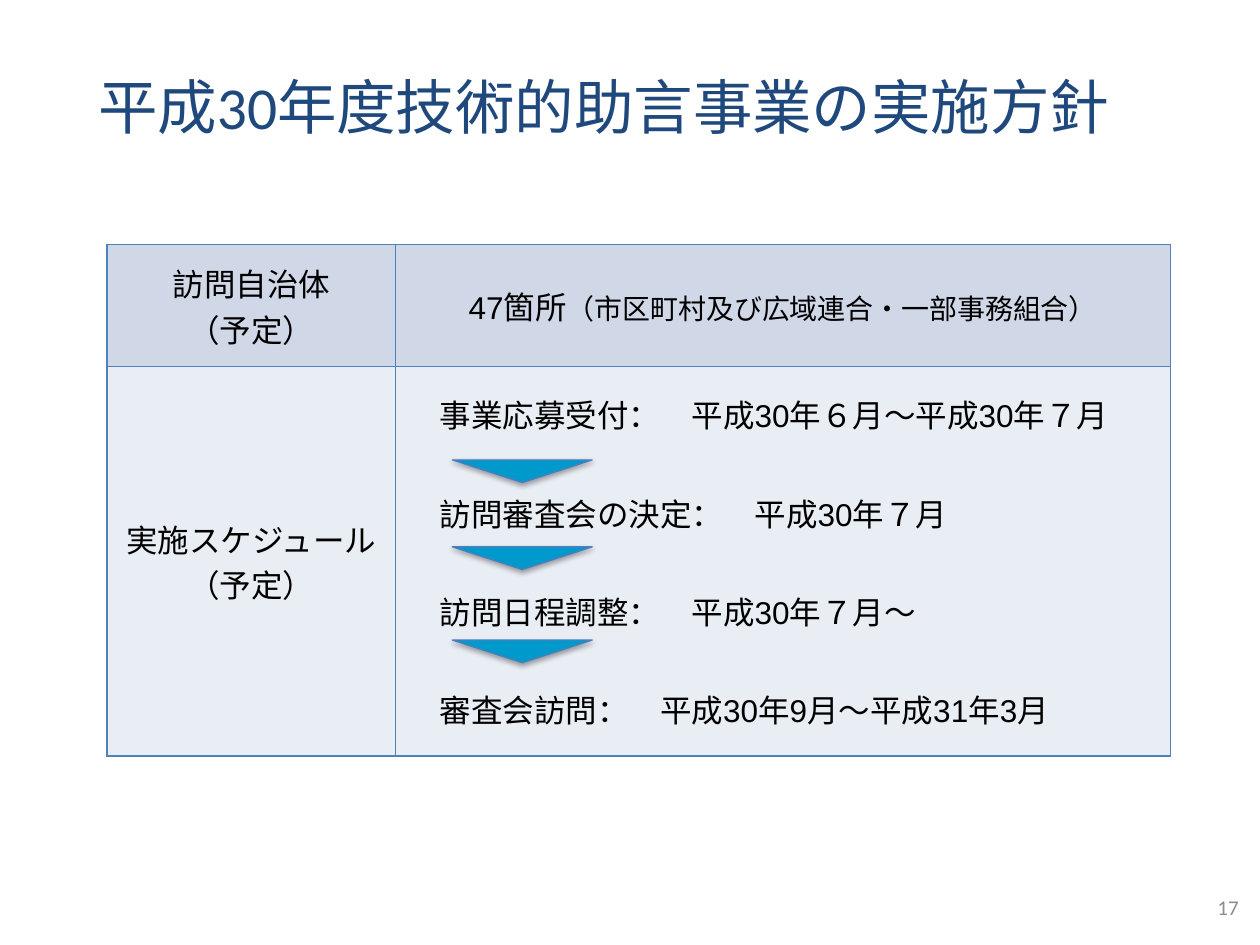
from dataclasses import dataclass

from lxml import etree
from pptx import Presentation
from pptx.dml.color import RGBColor
from pptx.enum.shapes import MSO_SHAPE as Shape
from pptx.enum.text import MSO_ANCHOR as Anchor, PP_ALIGN as Align
from pptx.oxml.ns import qn
from pptx.util import Inches, Pt


@dataclass(frozen=True)
class Theme:
    title_color: str = "1F497D"
    text_color: str = "000000"
    number_color: str = "8C8C8C"
    border_color: str = "4F81BD"
    arrow_fill: str = "0099CC"
    arrow_line: str = "4B7EBC"
    row_fills: tuple = ("D0D8E8", "E9EDF4")
    heading_font: str = "Calibri"
    body_font: str = "Arial"
    title_size: int = 34
    body_size: int = 18
    note_size: int = 16
    number_size: int = 12


def rgb(color):
    return RGBColor.from_string(color)


def write(frame, paragraphs, *, font, size, color, align=Align.LEFT, before=0, after=0):
    """Each paragraph is a string or a list of (text, size) runs."""
    frame.word_wrap = True
    for index, content in enumerate(paragraphs):
        paragraph = frame.paragraphs[0] if index == 0 else frame.add_paragraph()
        paragraph.alignment = align
        paragraph.space_before = Pt(before if index == 0 else 0)
        paragraph.space_after = Pt(after)
        runs = [(content, size)] if isinstance(content, str) else content
        for text, run_size in runs:
            run = paragraph.add_run()
            run.text = text
            run.font.name = font
            run.font.size = Pt(run_size)
            run.font.color.rgb = rgb(color)


class SlideBuilder:
    def __init__(self, slide, theme):
        self.slide = slide
        self.theme = theme

    def text(self, box, content, anchor, **style):
        shape = self.slide.shapes.add_textbox(*map(Inches, box))
        shape.text_frame.vertical_anchor = anchor
        write(shape.text_frame, [content], font=self.theme.heading_font, **style)

    def table(self, box, widths, heights, rows):
        table = self.slide.shapes.add_table(
            len(rows), len(widths), *map(Inches, box)).table
        for column, width in zip(table.columns, widths):
            column.width = Inches(width)
        for row, height in zip(table.rows, heights):
            row.height = Inches(height)
        for row, contents, fill in zip(table.rows, rows, self.theme.row_fills):
            for cell, (paragraphs, style) in zip(row.cells, contents):
                self.cell(cell, fill, paragraphs, style)

    def cell(self, cell, fill, paragraphs, style):
        cell.vertical_anchor = Anchor.MIDDLE
        cell.fill.solid()
        cell.fill.fore_color.rgb = rgb(fill)
        write(cell.text_frame, paragraphs, font=self.theme.body_font,
              size=self.theme.body_size, color=self.theme.text_color, **style)
        # Borders come before the fill in the cell properties
        properties = cell._tc.get_or_add_tcPr()
        for index, side in enumerate(("lnL", "lnR", "lnT", "lnB")):
            line = etree.Element(qn(f"a:{side}"), w=str(Pt(1)))
            solid = etree.SubElement(line, qn("a:solidFill"))
            etree.SubElement(solid, qn("a:srgbClr"), val=self.theme.border_color)
            properties.insert(index, line)

    def down_arrow(self, box):
        shape = self.slide.shapes.add_shape(
            Shape.ISOSCELES_TRIANGLE, *map(Inches, box))
        shape.rotation = 180
        shape.fill.solid()
        shape.fill.fore_color.rgb = rgb(self.theme.arrow_fill)
        shape.line.color.rgb = rgb(self.theme.arrow_line)
        shape.line.width = Pt(0.75)
        # Soft shadow straight below
        shape.shadow.inherit = False
        effects = shape._element.spPr.find(qn("a:effectLst"))
        shadow = etree.SubElement(
            effects, qn("a:outerShdw"), blurRad=str(Pt(3.1)), dist=str(Pt(1.8)),
            dir="5400000", rotWithShape="0")
        color = etree.SubElement(shadow, qn("a:srgbClr"), val="000000")
        etree.SubElement(color, qn("a:alpha"), val="35000")


def main():
    theme = Theme()
    presentation = Presentation()
    presentation.slide_width = Inches(10)
    presentation.slide_height = Inches(7.5)
    slide = presentation.slides.add_slide(presentation.slide_layouts[6])
    builder = SlideBuilder(slide, theme)

    # Title
    builder.text((0.68, 0.35, 8.75, 0.82), "平成30年度技術的助言事業の実施方針",
                 Anchor.BOTTOM, size=theme.title_size, color=theme.title_color)

    # Plan table
    centered = {"align": Align.CENTER}
    steps = {"before": 12, "after": 30}
    places = [("47箇所", theme.body_size),
              ("（市区町村及び広域連合・一部事務組合）", theme.note_size)]
    schedule = [
        "　事業応募受付：　平成30年６月～平成30年７月",
        "　訪問審査会の決定：　平成30年７月",
        "　訪問日程調整：　平成30年７月～",
        "　審査会訪問：　平成30年9月～平成31年3月",
    ]
    builder.table((0.85, 1.94, 8.44, 4.06), (2.29, 6.15), (0.97, 3.09), [
        [(["訪問自治体", "（予定）"], centered), ([places], centered)],
        [(["実施スケジュール", "（予定）"], centered), (schedule, steps)],
    ])

    # Arrows between the schedule steps
    for top in (3.65, 4.34, 5.08):
        builder.down_arrow((3.59, top, 1.11, 0.18))

    # Page number
    builder.text((7.6, 7, 2.33, 0.4), "17", Anchor.MIDDLE, align=Align.RIGHT,
                 size=theme.number_size, color=theme.number_color)

    presentation.save("out.pptx")


if __name__ == "__main__":
    main()
